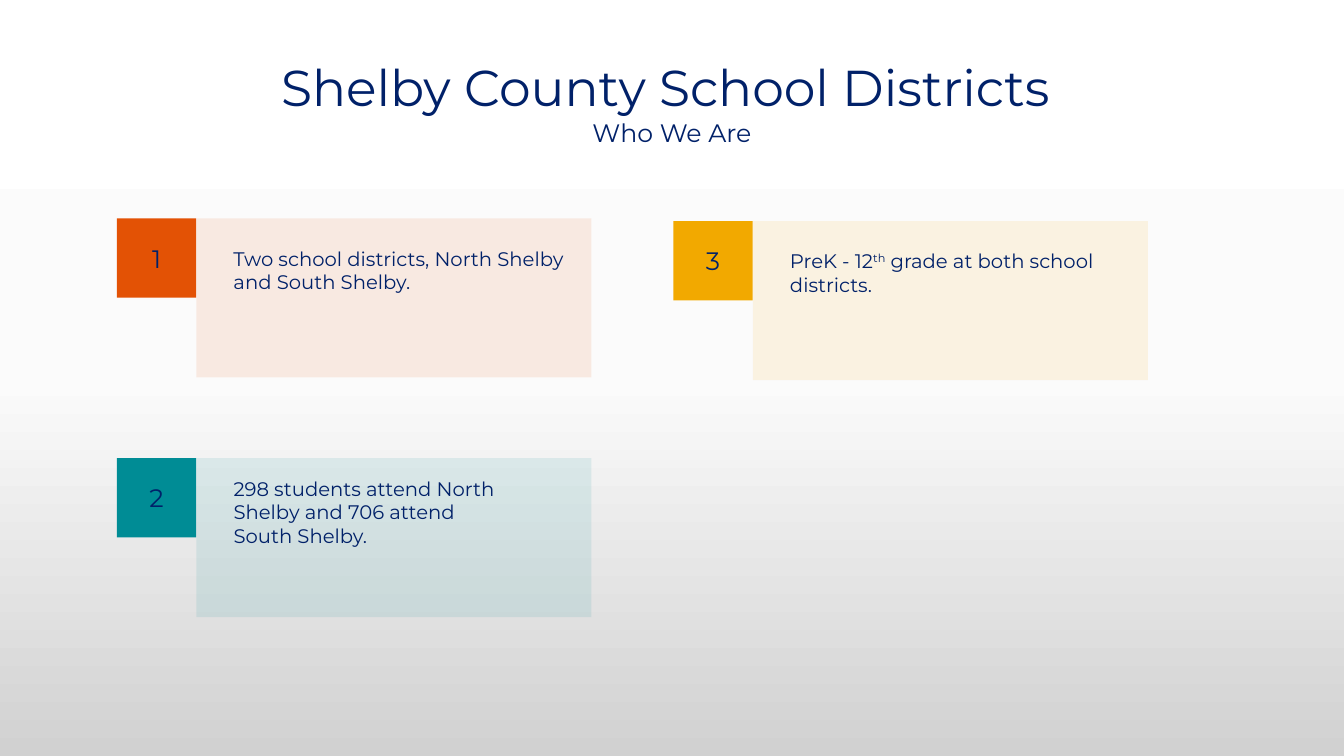
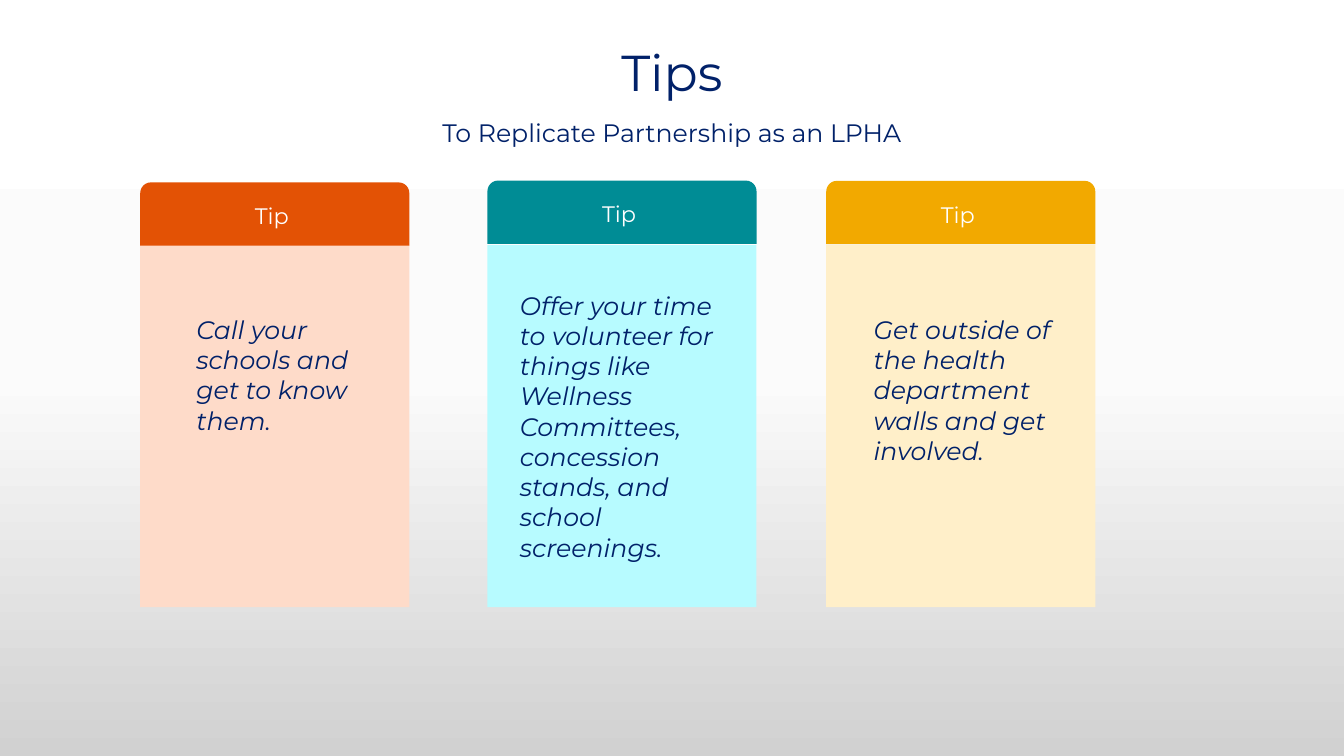
import copy

import pptx
import pptx.dml.color
import pptx.enum.shapes
import pptx.enum.text
import pptx.util
from lxml import etree

Pt = pptx.util.Pt
SHAPE = pptx.enum.shapes.MSO_SHAPE
ALIGN = pptx.enum.text.PP_ALIGN
ANCHOR = pptx.enum.text.MSO_ANCHOR

FONT = "Montserrat"
NAVY, WHITE = "012169", "FFFFFF"
ORANGE, TEAL, GOLD = "E35205", "008C95", "F2A900"
BACKGROUND = [(0, "FFFFFF"), (0.5, "FBFBFB"), (1, "D1D1D1")]

# number, colour, left, top, text offset from top, text width, runs (text, superscript)
FACTS = [
    ("1", ORANGE, 83.5, 156, 16.5, 256.3,
     [("Two school districts, North Shelby and South Shelby.", False)]),
    ("2", TEAL, 83.5, 327.3, 9.7, 214,
     [("298 students attend North Shelby and 706 attend South Shelby.", False)]),
    ("3", GOLD, 481, 158, 16.5, 252,
     [("PreK - 12", False), ("th", True), (" grade at both school districts.", False)]),
]
BADGE, PANEL_W, PANEL_H, FACT_INDENT = 56.7, 282.3, 113.6, 76.2

# header colour, body colour, left, header top, text left, text top, text width, text
TIPS = [
    (ORANGE, "FEDBC9", 100.2, 130.3, 133.2, 221, 149,
     "Call your schools and get to know them."),
    (TEAL, "B7FBFF", 348.2, 129, 364.3, 203.6, 159.1,
     "Offer your time to volunteer for things like Wellness Committees, "
     "concession stands, and school screenings."),
    (GOLD, "FFEFC9", 590.2, 129.2, 617, 221, 154.8,
     "Get outside of the health department walls and get involved."),
]
TIP_W, HEADER_H, BODY_TOP, BODY_H = 192.2, 45.2, 175, 258.6


def rgb(value):
    return pptx.dml.color.RGBColor.from_string(value)


def write(tf, runs, size, color=NAVY, align=ALIGN.LEFT, anchor=ANCHOR.TOP,
          spacing=None, italic=False):
    """Fill a text frame with one paragraph of (text, superscript) runs."""
    frame_format = {"word_wrap": True, "vertical_anchor": anchor,
                    "auto_size": pptx.enum.text.MSO_AUTO_SIZE.NONE}
    for name, value in frame_format.items():
        setattr(tf, name, value)
    p = tf.paragraphs[0]
    p.alignment = align
    if spacing:
        p.line_spacing = spacing
    for text, superscript in runs:
        r = p.add_run()
        r.text = text
        for name, value in {"name": FONT, "size": Pt(size), "italic": italic}.items():
            setattr(r.font, name, value)
        r.font.color.rgb = rgb(color)
        if superscript:
            r.font._element.set("baseline", "30000")


def add_text(s, left, top, width, height, runs, size, **style):
    box = s.shapes.add_textbox(Pt(left), Pt(top), Pt(width), Pt(height))
    write(box.text_frame, runs, size, **style)


def add_block(s, kind, left, top, width, height, color, opacity=100):
    sp = s.shapes.add_shape(kind, Pt(left), Pt(top), Pt(width), Pt(height))
    sp.shadow.inherit = False
    sp.fill.solid()
    sp.fill.fore_color.rgb = rgb(color)
    sp.line.fill.background()
    if opacity < 100:
        clr = sp.fill._xPr.find(".//" + pptx.oxml.ns.qn("a:srgbClr"))
        etree.SubElement(clr, pptx.oxml.ns.qn("a:alpha")).set("val", str(opacity * 1000))
    return sp


def add_label(sp, text, size, color):
    write(sp.text_frame, [(text, False)], size, color=color,
          align=ALIGN.CENTER, anchor=ANCHOR.MIDDLE)


def set_background(master):
    fill = master.background.fill
    fill.gradient()
    fill.gradient_angle = 270
    first = fill.gradient_stops[0]._gs
    first.addnext(copy.deepcopy(first))
    for stop, (position, color) in zip(fill.gradient_stops, BACKGROUND):
        stop.position = position
        stop.color.rgb = rgb(color)


def add_slide(prs, title, subtitle, title_top):
    s = prs.slides.add_slide(prs.slide_layouts.get_by_name("Title Only"))
    place = {"left": 66, "top": title_top, "width": 828, "height": 70}
    for name, value in place.items():
        setattr(s.shapes.title, name, Pt(value))
    write(s.shapes.title.text_frame, [(title, False)], 36, align=ALIGN.CENTER,
          anchor=ANCHOR.MIDDLE, spacing=0.9)
    add_text(s, 120, 83, 720, 34.5, [(subtitle, False)], 18,
             align=ALIGN.CENTER, spacing=0.9)
    return s


def add_facts(s):
    for number, color, left, top, text_drop, text_w, runs in FACTS:
        badge = add_block(s, SHAPE.RECTANGLE, left, top, BADGE, BADGE, color)
        add_label(badge, number, 18, NAVY)
        add_block(s, SHAPE.RECTANGLE, left + BADGE, top, PANEL_W, PANEL_H, color, opacity=10)
        add_text(s, left + FACT_INDENT, top + text_drop, text_w, 58, runs, 14)


def add_tips(s):
    for color, tint, left, top, text_left, text_top, text_w, text in TIPS:
        add_block(s, SHAPE.RECTANGLE, left, BODY_TOP, TIP_W, BODY_H, tint)
        header = add_block(s, SHAPE.ROUND_2_SAME_RECTANGLE, left, top, TIP_W, HEADER_H, color)
        add_label(header, "Tip ", 16, WHITE)
        add_text(s, text_left, text_top, text_w, BODY_TOP + BODY_H - text_top,
                 [(text, False)], 18, italic=True)


def main():
    prs = pptx.Presentation()
    prs.slide_width, prs.slide_height = Pt(960), Pt(540)
    set_background(prs.slide_master)
    add_facts(add_slide(prs, "Shelby County School Districts ", "Who We Are", 29.5))
    add_tips(add_slide(prs, "Tips", "To Replicate Partnership as an LPHA", 18.7))
    prs.save("out.pptx")


if __name__ == "__main__":
    main()
